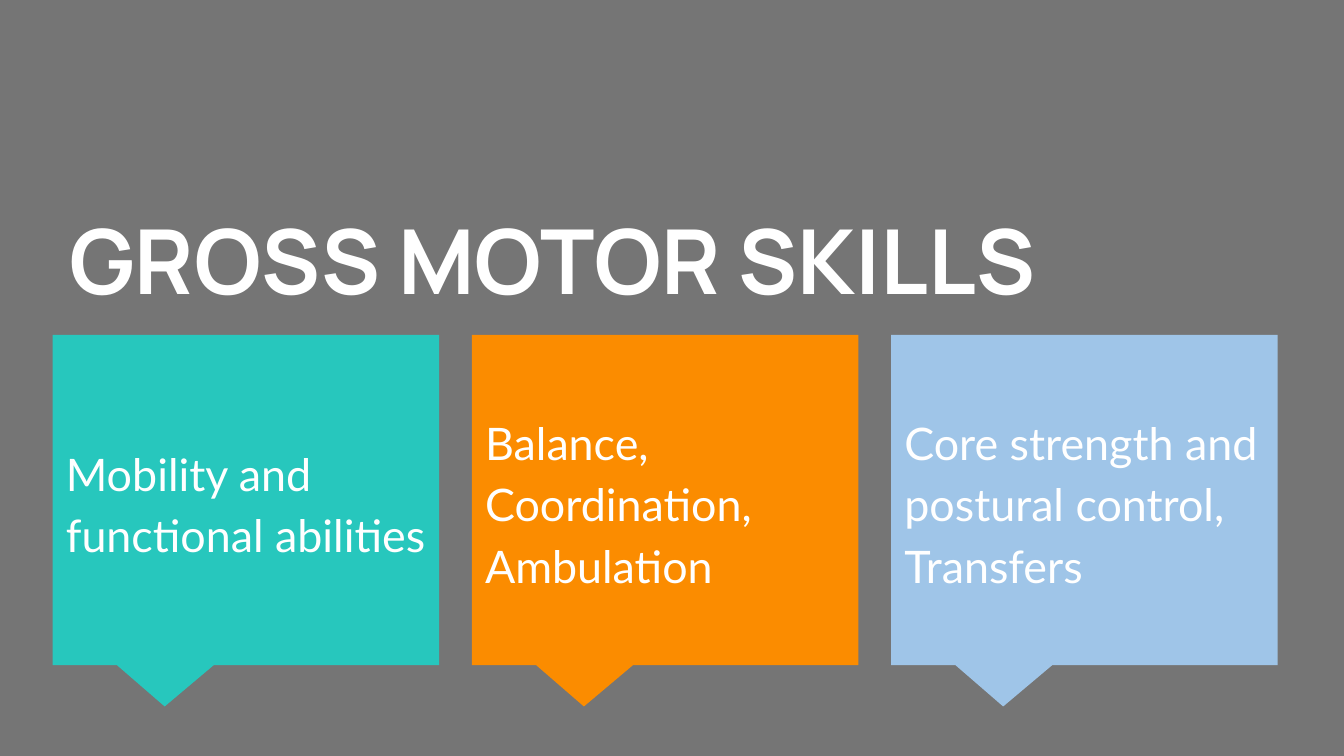
from pptx import Presentation
from pptx.dml.color import RGBColor
from pptx.enum.shapes import MSO_SHAPE
from pptx.enum.text import MSO_ANCHOR, PP_ALIGN
from pptx.util import Pt

COLORS = {
    "background": "757575",
    "text": "FFFFFF",
    "teal": "27C7BD",
    "orange": "FB8C00",
    "blue": "9FC5E8",
}
INSET = 7.2
TITLE_FONT = {"name": "Manrope", "size": Pt(48), "bold": True}
CARD_FONT = {"name": "Lato", "size": Pt(24), "bold": False}
CARDS = [
    ("teal", ["Mobility and functional abilities"]),
    ("orange", ["Balance,", "Coordination,", "Ambulation"]),
    ("blue", ["Core strength and postural control,", "Transfers"]),
]


def color(name):
    return RGBColor.from_string(COLORS[name])


def write_text(text_frame, lines, font_format, anchor, line_spacing):
    frame_format = {"word_wrap": True, "vertical_anchor": anchor}
    for side in ("left", "top", "right", "bottom"):
        frame_format[f"margin_{side}"] = Pt(INSET)
    for name, value in frame_format.items():
        setattr(text_frame, name, value)
    text_frame.text = "\n".join(lines)
    paragraph_format = {
        "alignment": PP_ALIGN.LEFT,
        "line_spacing": line_spacing,
        "space_before": Pt(0),
    }
    for paragraph in text_frame.paragraphs:
        for name, value in paragraph_format.items():
            setattr(paragraph, name, value)
        for name, value in font_format.items():
            setattr(paragraph.font, name, value)
        paragraph.font.color.rgb = color("text")


def place_title(slide, left, top, width, height):
    title = slide.shapes.title
    box = {"left": left, "top": top, "width": width, "height": height}
    for name, value in box.items():
        setattr(title, name, Pt(value))
    write_text(title.text_frame, ["GROSS MOTOR SKILLS"], TITLE_FONT, MSO_ANCHOR.TOP, 1.0)


def add_callout(slide, left, top, width, height, fill, lines):
    callout = slide.shapes.add_shape(
        MSO_SHAPE.RECTANGULAR_CALLOUT, Pt(left), Pt(top), Pt(width), Pt(height)
    )
    callout.adjustments[0] = -0.21
    callout.adjustments[1] = 0.625
    callout.shadow.inherit = False
    callout.fill.solid()
    callout.fill.fore_color.rgb = color(fill)
    callout.line.fill.background()
    write_text(callout.text_frame, lines, CARD_FONT, MSO_ANCHOR.MIDDLE, 1.15)


def add_callout_row(slide, left, top, width, height, gap=17.5):
    """Share the width equally between the callouts."""
    card_width = (width - gap * (len(CARDS) - 1)) / len(CARDS)
    for index, (fill, lines) in enumerate(CARDS):
        card_left = left + index * (card_width + gap)
        add_callout(slide, card_left, top, card_width, height, fill, lines)


def main():
    presentation = Presentation()
    presentation.slide_width = Pt(720)
    presentation.slide_height = Pt(405)
    slide = presentation.slides.add_slide(presentation.slide_layouts[5])
    slide.background.fill.solid()
    slide.background.fill.fore_color.rgb = color("background")
    place_title(slide, 30, 102.5, 679, 80.5)
    add_callout_row(slide, 28.2, 179.4, 656.3, 177)
    presentation.save("out.pptx")


if __name__ == "__main__":
    main()
